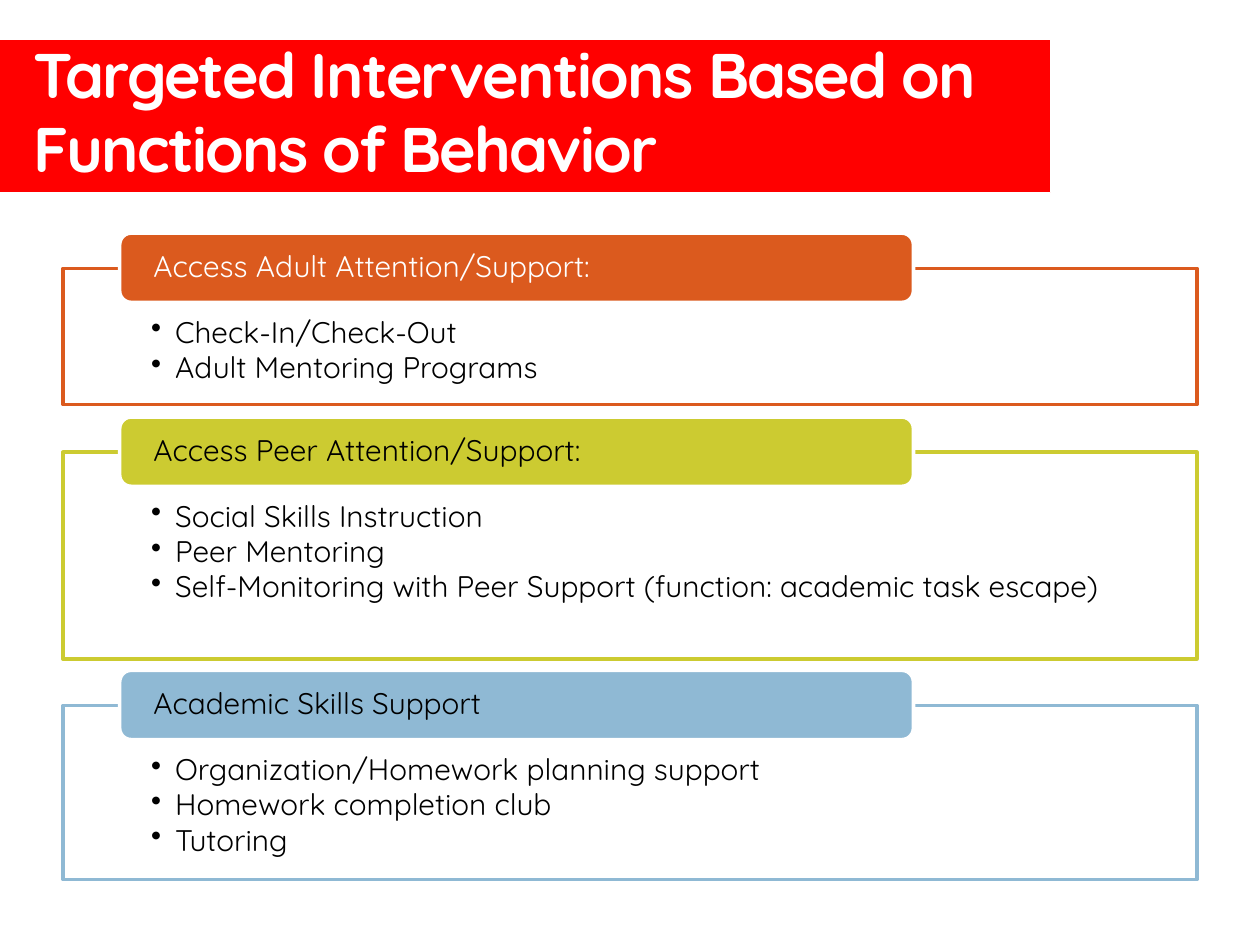
from pptx import Presentation
from pptx import util as u
from pptx.dml import color
from pptx.enum import shapes, text
from pptx.oxml import ns
from lxml import etree

INK = {"red": "FF0000", "white": "FFFFFF", "black": "000000",
       "rust": "DB5A1E", "lime": "CCCB31", "blue": "8FB9D4"}
KIND = shapes.MSO_SHAPE
inch = u.Inches


def box(kind, spot, fill, line, width, pads):
    shape = slide.shapes.add_shape(kind, *map(inch, spot))
    shape.shadow.inherit = False
    shape.fill.solid()
    shape.fill.fore_color.rgb = color.RGBColor.from_string(INK[fill])
    shape.line.color.rgb = color.RGBColor.from_string(INK[line])
    shape.line.width = u.Pt(width)
    frame = shape.text_frame
    frame.word_wrap = True
    frame.margin_left, frame.margin_top, frame.margin_right, frame.margin_bottom = map(inch, pads)
    return shape


def write(para, words, size, ink):
    para.text = words
    para.alignment = text.PP_ALIGN.LEFT
    para.font.name = "Quicksand"
    para.font.size = u.Pt(size)
    para.font.color.rgb = color.RGBColor.from_string(INK[ink])


deck = Presentation()
deck.slide_width, deck.slide_height = inch(10), inch(7.5)
slide = deck.slides.add_slide(deck.slide_layouts[6])

box(KIND.RECTANGLE, (-0.08, 0.31, 8.42, 1.22), "red", "white", 0.75, (0, 0, 0, 0))
title = slide.shapes.add_textbox(inch(0.17), inch(0.36), inch(8.17), inch(1.08))
title.text_frame.word_wrap = True
title.text_frame.vertical_anchor = text.MSO_ANCHOR.MIDDLE
head = title.text_frame.paragraphs[0]
write(head, "Targeted Interventions Based on Functions of Behavior", 36, "white")
head.font.bold = True
head.line_spacing = 0.97
head.runs[0].font._element.set("spc", "-100")

groups = [
    (2.13, 1.08, "rust", "white", "Access Adult Attention/Support:",
     ["Check-In/Check-Out", "Adult Mentoring Programs"]),
    (3.59, 1.64, "lime", "black", "Access Peer Attention/Support:",
     ["Social Skills Instruction", "Peer Mentoring",
      "Self-Monitoring with Peer Support (function: academic task escape)"]),
    (5.6, 1.38, "blue", "black", "Academic Skills Support",
     ["Organization/Homework planning support", "Homework completion club", "Tutoring"]),
]

for top, tall, tint, ink, label, items in groups:
    panel = box(KIND.RECTANGLE, (0.5, top, 9, tall), "white", tint, 2.08, (0.7, 0.39, 0.7, 0.13))
    solid = panel.fill._xPr.find(ns.qn("a:solidFill"))
    etree.SubElement(solid[0], ns.qn("a:alpha"), val="90000")
    frame = panel.text_frame
    frame.vertical_anchor = text.MSO_ANCHOR.TOP
    for i, item in enumerate(items):
        para = frame.paragraphs[0] if i == 0 else frame.add_paragraph()
        props = para._p.get_or_add_pPr()
        props.set("marL", str(inch(0.19)))
        props.set("indent", str(inch(-0.19)))
        etree.SubElement(props, ns.qn("a:buChar"), char="•")
        write(para, item, 17, "black")
        para.line_spacing = 0.9
        para.space_after = u.Pt(1.8)

    tab = box(KIND.ROUNDED_RECTANGLE, (0.95, top - 0.28, 6.3, 0.55), tint, "white", 2.08, (0.24, 0, 0.24, 0))
    tab.text_frame.vertical_anchor = text.MSO_ANCHOR.MIDDLE
    name = tab.text_frame.paragraphs[0]
    write(name, label, 17, ink)
    name.line_spacing = 0.9

deck.save("out.pptx")
